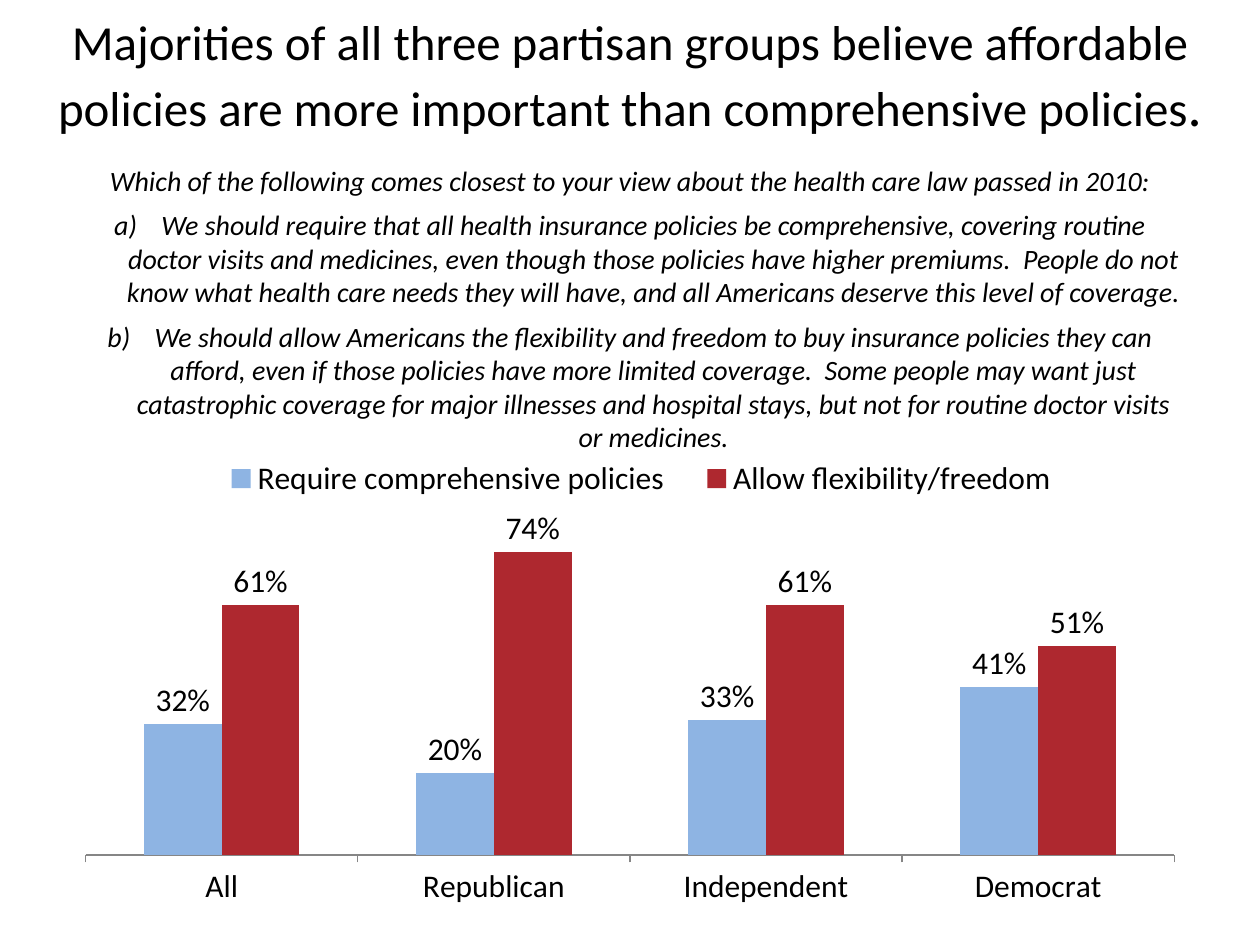
from lxml.etree import SubElement
from pptx import Presentation
from pptx.chart.data import CategoryChartData
from pptx.dml.color import RGBColor
from pptx.enum.chart import (XL_CHART_TYPE, XL_LABEL_POSITION,
                             XL_LEGEND_POSITION, XL_TICK_MARK)
from pptx.enum.text import MSO_ANCHOR, PP_ALIGN
from pptx.oxml.ns import qn
from pptx.util import Pt

THEME = {
    "font": "Calibri", "ink": "000000", "axis": "868686",
    "title": 28, "stop": 32, "body": 16, "chart": 18,
}
TITLE = ("Majorities of all three partisan groups believe affordable policies "
         "are more important than comprehensive policies")
QUESTION = ("Which of the following comes closest to your view about the "
            "health care law passed in 2010:")
ANSWERS = [
    "We should require that all health insurance policies be comprehensive, "
    "covering routine doctor visits and medicines, even though those policies "
    "have higher premiums.  People do not know what health care needs they "
    "will have, and all Americans deserve this level of coverage.",
    "We should allow Americans the flexibility and freedom to buy insurance "
    "policies they can afford, even if those policies have more limited "
    "coverage.  Some people may want just catastrophic coverage for major "
    "illnesses and hospital stays, but not for routine doctor visits or "
    "medicines.",
]
GROUPS = ["All", "Republican", "Independent", "Democrat"]
SERIES = [
    ("Require comprehensive policies", "8EB4E3", (0.32, 0.20, 0.33, 0.41)),
    ("Allow flexibility/freedom", "AE282F", (0.61, 0.74, 0.61, 0.51)),
]
# Left, top, width, height in points
BOXES = {
    "title": (0, 7.2, 720, 70.56),
    "body": (36, 90, 648, 174.24),
    "chart": (36, 217.44, 648, 311.76),
}
# Shares of the chart's own size
PLOT = {"x": 0.02, "y": 0.27, "w": 0.96, "h": 0.6}
LEGEND = {"x": 0.12, "y": 0.14, "w": 0.78, "h": 0.08}
INDENT = 27


def style(font, size, **more):
    looks = {"name": THEME["font"], "size": Pt(size), **more}
    for key, value in looks.items():
        setattr(font, key, value)
    font.color.rgb = RGBColor.from_string(THEME["ink"])


def add_box(slide, name, anchor=MSO_ANCHOR.TOP):
    frame = slide.shapes.add_textbox(*map(Pt, BOXES[name])).text_frame
    frame.word_wrap = True
    frame.vertical_anchor = anchor
    return frame


def add_run(para, text, size, **more):
    para.alignment = PP_ALIGN.CENTER
    run = para.add_run()
    run.text = text
    style(run.font, size, **more)


def letter(para):
    """Number the paragraph a), b) and so on with a hanging indent."""
    props = para._p.get_or_add_pPr()
    props.set("marL", str(Pt(INDENT)))
    props.set("indent", str(-Pt(INDENT)))
    SubElement(props, qn("a:buFont"), typeface="+mj-lt")
    SubElement(props, qn("a:buAutoNum"), type="alphaLcParenR")


def place(parent, spot, inner=False):
    """Give a plot area or legend a fixed place inside the chart."""
    layout = parent.find(qn("c:layout"))
    if layout is None:
        layout = SubElement(parent, qn("c:layout"))
        mark = parent.find(qn("c:legendPos"))
        if mark is None:
            parent.insert(0, layout)
        else:
            mark.addnext(layout)
    manual = SubElement(layout, qn("c:manualLayout"))
    parts = [("layoutTarget", "inner")] if inner else []
    parts += [("xMode", "edge"), ("yMode", "edge"), *spot.items()]
    for tag, value in parts:
        SubElement(manual, qn("c:" + tag), val=str(value))


def add_bars(slide):
    data = CategoryChartData(number_format="0%")
    data.categories = GROUPS
    for name, _, values in SERIES:
        data.add_series(name, values)
    chart = slide.shapes.add_chart(
        XL_CHART_TYPE.COLUMN_CLUSTERED, *map(Pt, BOXES["chart"]), data).chart
    style(chart.font, THEME["chart"])
    chart.has_title = False

    chart.has_legend = True
    chart.legend.position = XL_LEGEND_POSITION.TOP
    chart.legend.include_in_layout = False
    place(chart.legend._element, LEGEND)
    place(chart._chartSpace.chart.plotArea, PLOT, inner=True)

    scale = {"minimum_scale": 0, "maximum_scale": 0.8,
             "has_major_gridlines": False, "visible": False}
    for key, value in scale.items():
        setattr(chart.value_axis, key, value)
    chart.value_axis.tick_labels.number_format = "0%"
    chart.value_axis.tick_labels.number_format_is_linked = False
    chart.category_axis.major_tick_mark = XL_TICK_MARK.OUTSIDE
    line = chart.category_axis.format.line
    line.width = Pt(0.75)
    line.color.rgb = RGBColor.from_string(THEME["axis"])

    plot = chart.plots[0]
    plot.gap_width, plot.overlap, plot.vary_by_categories = 150, 0, False
    for bars, (_, color, _) in zip(plot.series, SERIES):
        bars.format.fill.solid()
        bars.format.fill.fore_color.rgb = RGBColor.from_string(color)
        looks = {"show_value": True, "number_format": "0%",
                 "number_format_is_linked": False,
                 "position": XL_LABEL_POSITION.OUTSIDE_END}
        for key, value in looks.items():
            setattr(bars.data_labels, key, value)
        style(bars.data_labels.font, THEME["chart"])


def main():
    deck = Presentation()
    deck.slide_width, deck.slide_height = Pt(720), Pt(540)
    slide = deck.slides.add_slide(deck.slide_layouts[6])

    body = add_box(slide, "body")
    add_run(body.paragraphs[0], QUESTION, THEME["body"], italic=True)
    for answer in ANSWERS:
        body.paragraphs[-1].space_after = Pt(6)
        para = body.add_paragraph()
        add_run(para, answer, THEME["body"], italic=True)
    for para in body.paragraphs[1:]:
        letter(para)

    add_bars(slide)

    head = add_box(slide, "title", MSO_ANCHOR.MIDDLE).paragraphs[0]
    add_run(head, TITLE, THEME["title"])
    add_run(head, ".", THEME["stop"])
    deck.save("out.pptx")


if __name__ == "__main__":
    main()
